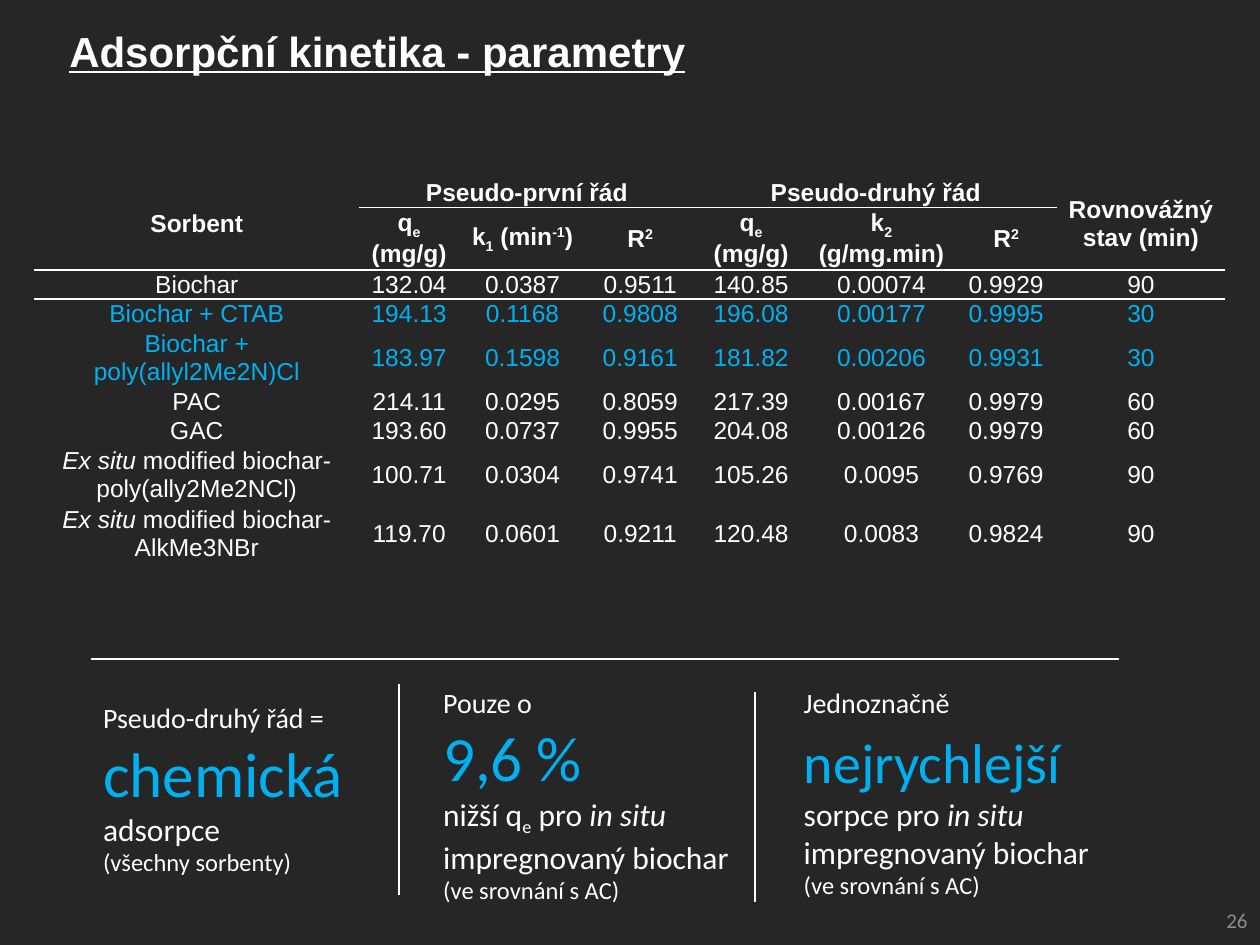
import pptx
import pptx.dml.color
import pptx.enum.shapes
import pptx.enum.text
import pptx.oxml
import pptx.oxml.ns
import pptx.util
from lxml import etree

Pt = pptx.util.Pt
ALIGN = pptx.enum.text.PP_ALIGN
ANCHOR = pptx.enum.text.MSO_ANCHOR

COLOURS = {"ground": "262626", "text": "FFFFFF", "accent": "00B0F0", "number": "8C8C8C"}
BASELINES = {"sub": "-25000", "super": "30000"}
PLAIN_STYLE = "{2D5ABB26-0587-4C30-8999-92F81FD0307C}"

COLUMN_WIDTHS = [185.8, 56.9, 72.7, 61.9, 64.8, 84.2, 58.3, 95.8]
ROW_HEIGHTS = [16.75, 35.7, 16.75, 16.75, 33.6, 16.75, 16.75, 33.6, 33.6]
HIGHLIGHTED = (3, 4)

CAPACITY = ["q", ("e", "sub"), " (mg/g)"]
FIT = ["R", ("2", "super")]
IN_SITU = [("in situ ", "italic"), "impregnovaný biochar"]
EX_SITU = ("Ex situ ", "italic")

ROWS = [
    ["Sorbent", "Pseudo-první řád", "", "", "Pseudo-druhý řád", "", "", "Rovnovážný stav (min)"],
    ["", CAPACITY, ["k", ("1", "sub"), " (min", ("-1", "super"), ")"], FIT,
     CAPACITY, ["k", ("2", "sub"), " (g/mg.min)"], FIT, ""],
    ["Biochar", "132.04", "0.0387", "0.9511", "140.85", "0.00074", "0.9929", "90"],
    ["Biochar + CTAB", "194.13", "0.1168", "0.9808", "196.08", "0.00177", "0.9995", "30"],
    ["Biochar + poly(allyl2Me2N)Cl", "183.97", "0.1598", "0.9161", "181.82", "0.00206", "0.9931", "30"],
    ["PAC", "214.11", "0.0295", "0.8059", "217.39", "0.00167", "0.9979", "60"],
    ["GAC", "193.60", "0.0737", "0.9955", "204.08", "0.00126", "0.9979", "60"],
    [[EX_SITU, "modified biochar-poly(ally2Me2NCl)"],
     "100.71", "0.0304", "0.9741", "105.26", "0.0095", "0.9769", "90"],
    [[EX_SITU, "modified biochar-AlkMe3NBr"],
     "119.70", "0.0601", "0.9211", "120.48", "0.0083", "0.9824", "90"],
]
MERGES = [((0, 0), (1, 0)), ((0, 1), (0, 3)), ((0, 4), (0, 6)), ((0, 7), (1, 7))]

CALLOUTS = [
    ((51.8, 396.7, 215.3, 108.7), 36, 0,
     ["Pseudo-druhý řád =", "chemická", "adsorpce", "(všechny sorbenty)"]),
    ((246.2, 388.1, 202.3, 151), 36, 0,
     ["Pouze o", "9,6 %", ["nižší q", ("e", "sub"), " pro ", *IN_SITU], "(ve srovnání s AC)"]),
    ((452.2, 388.1, 211.7, 151), 32, 5,
     ["Jednoznačně", "nejrychlejší", ["sorpce pro ", *IN_SITU], "(ve srovnání s AC)"]),
]
DIVIDERS = [
    (51.8, 376.6, 639.4, 376.6),
    (228.2, 391, 228.2, 511.2),
    (431.3, 395.3, 431.3, 515.5),
]


def colour(name):
    return pptx.dml.color.RGBColor.from_string(COLOURS[name])


def write(para, content, size, face, tint="text", align=ALIGN.LEFT, bold=False):
    para.alignment = align
    font = para.font
    font.size, font.name, font.bold = Pt(size), face, bold
    font.color.rgb = colour(tint)
    for part in [content] if isinstance(content, str) else content:
        text, style = (part, None) if isinstance(part, str) else part
        span = para.add_run()
        span.text = text
        if style == "italic":
            span.font.italic = True
        elif style:
            span._r.get_or_add_rPr().set("baseline", BASELINES[style])


def add_title(page, text):
    box = page.shapes.title
    box.left, box.top, box.width, box.height = Pt(0), Pt(10.8), Pt(431.3), Pt(36)
    frame = box.text_frame
    frame.auto_size = pptx.enum.text.MSO_AUTO_SIZE.NONE
    frame.vertical_anchor = ANCHOR.TOP
    para = frame.paragraphs[0]
    write(para, text, 24, "Arial", align=ALIGN.CENTER, bold=True)
    para.font.underline = True


def add_box(page, place, anchor=ANCHOR.TOP):
    box = page.shapes.add_textbox(*map(Pt, place))
    box.text_frame.word_wrap = True
    box.text_frame.vertical_anchor = anchor
    return box.text_frame


def add_border(cell, side, width):
    line = pptx.oxml.parse_xml(
        f'<a:{side} {pptx.oxml.ns.nsdecls("a")} w="{Pt(width)}"><a:solidFill>'
        f'<a:srgbClr val="{COLOURS["text"]}"/></a:solidFill></a:{side}>')
    cell._tc.get_or_add_tcPr().append(line)


def rule_below(row, column):
    if row == 1:
        return 1.5
    if row == 0:
        return 1 if 0 < column < 7 else 1.5
    return 0


def format_cell(cell, row, column, content):
    cell.margin_left = cell.margin_right = Pt(5)
    cell.margin_top = cell.margin_bottom = Pt(0)
    cell.vertical_anchor = ANCHOR.MIDDLE
    above = rule_below(row - 1, column)
    below = rule_below(row, column)
    if above and not (row == 1 and column in (0, 7)):
        add_border(cell, "lnT", above)
    if below:
        add_border(cell, "lnB", below)
    cell.fill.solid()
    cell.fill.fore_color.rgb = colour("ground")
    tint = "accent" if row in HIGHLIGHTED else "text"
    if content:
        write(cell.text_frame.paragraphs[0], content, 14, "Arial", tint, ALIGN.CENTER, row < 2)


def add_parameters(page):
    frame = page.shapes.add_table(
        len(ROWS), len(COLUMN_WIDTHS), Pt(19.6), Pt(101.8),
        Pt(sum(COLUMN_WIDTHS)), Pt(sum(ROW_HEIGHTS)))
    table = frame.table
    table.first_row = table.horz_banding = False
    table._tbl.tblPr.find(pptx.oxml.ns.qn("a:tableStyleId")).text = PLAIN_STYLE
    for column, width in zip(table.columns, COLUMN_WIDTHS):
        column.width = Pt(width)
    for row, height in zip(table.rows, ROW_HEIGHTS):
        row.height = Pt(height)
    for start, end in MERGES:
        table.cell(*start).merge(table.cell(*end))
    for row, contents in enumerate(ROWS):
        for column, content in enumerate(contents):
            format_cell(table.cell(row, column), row, column, content)


def add_callout(page, place, key_size, key_gap, lines):
    frame = add_box(page, place)
    for index, (content, size) in enumerate(zip(lines, (16, key_size, 18, 14))):
        para = frame.add_paragraph() if index else frame.paragraphs[0]
        write(para, content, size, "Calibri", "accent" if index == 1 else "text")
        if index == 1:
            para.space_before = Pt(key_gap)


def add_divider(page, ends):
    line = page.shapes.add_connector(pptx.enum.shapes.MSO_CONNECTOR.STRAIGHT, *map(Pt, ends))
    line.line.color.rgb = colour("text")
    line.line.width = Pt(1)
    etree.SubElement(line._element.spPr, pptx.oxml.ns.qn("a:effectLst"))


def main():
    deck = pptx.Presentation()
    deck.slide_width, deck.slide_height = Pt(720), Pt(540)
    page = deck.slides.add_slide(deck.slide_layouts.get_by_name("Title Only"))
    page.background.fill.solid()
    page.background.fill.fore_color.rgb = colour("ground")
    add_title(page, "Adsorpční kinetika - parametry")
    add_parameters(page)
    for callout in CALLOUTS:
        add_callout(page, *callout)
    for ends in DIVIDERS:
        add_divider(page, ends)
    number = add_box(page, (558, 511.2, 162, 28.8), ANCHOR.MIDDLE)
    write(number.paragraphs[0], "26", 12, "Calibri", "number", ALIGN.RIGHT)
    deck.save("out.pptx")


if __name__ == "__main__":
    main()
